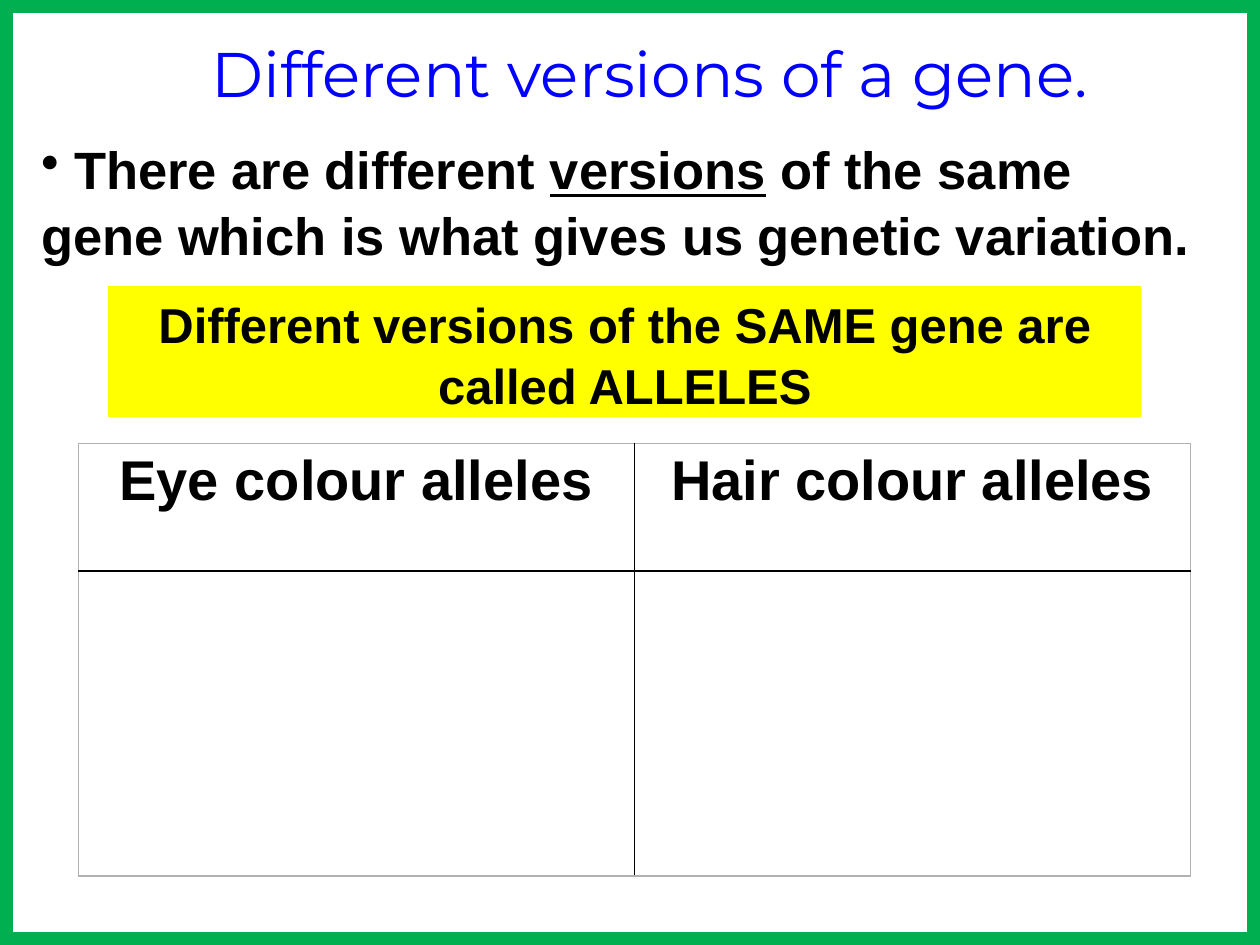
from lxml.etree import SubElement
from pptx import Presentation
from pptx.dml.color import RGBColor
from pptx.enum.shapes import MSO_SHAPE
from pptx.enum.text import MSO_ANCHOR, PP_ALIGN
from pptx.oxml.ns import qn
from pptx.util import Cm, Pt

BLACK = RGBColor(0x00, 0x00, 0x00)
BLUE = RGBColor(0x00, 0x00, 0xFF)
GREEN = RGBColor(0x00, 0xB0, 0x50)
YELLOW = RGBColor(0xFF, 0xFF, 0x00)
WHITE = RGBColor(0xFF, 0xFF, 0xFF)
GREY = RGBColor(0xB2, 0xB2, 0xB2)

# Content: runs are (text, underlined)
TITLE = [("Different versions of a gene.", False)]
EXPLANATION = [
    (" There are different ", False),
    ("versions", True),
    (" of the same gene which is what gives us genetic variation.", False),
]
DEFINITION = [("Different versions of the SAME gene are called ALLELES", False)]
ALLELE_ROWS = [["Eye colour alleles", "Hair colour alleles"], ["", ""]]
ROW_HEIGHTS = [Cm(2.57), Cm(6.15)]
COLUMN_WIDTH = Cm(11.21)


def write(frame, runs, size, font="Arial", color=BLACK, bold=True,
          align=PP_ALIGN.CENTER, spacing=None):
    paragraph = frame.paragraphs[0]
    paragraph.alignment = align
    paragraph.line_spacing = spacing
    for text, underlined in runs:
        run = paragraph.add_run()
        run.text = text
        run.font.name = font
        run.font.size = Pt(size)
        run.font.bold = bold
        run.font.underline = underlined
        run.font.color.rgb = color
    return paragraph


def set_border(cell, side, color):
    line = SubElement(cell._tc.get_or_add_tcPr(), qn(f"a:{side}"), w=str(Pt(1)))
    fill = SubElement(line, qn("a:solidFill"))
    SubElement(fill, qn("a:srgbClr"), val=str(color))


presentation = Presentation()
presentation.slide_width, presentation.slide_height = Cm(25.4), Cm(19.05)
slide = presentation.slides.add_slide(presentation.slide_layouts[6])
shapes = slide.shapes

# Title
title = shapes.add_textbox(Cm(0.79), Cm(0.58), Cm(24.61), Cm(1.98)).text_frame
title.word_wrap = False
write(title, TITLE, 36, font="Montserrat", color=BLUE, bold=False)

# Bulleted explanation
explanation = shapes.add_textbox(Cm(0.58), Cm(2.59), Cm(24), Cm(2.82)).text_frame
explanation.word_wrap = True
bulleted = write(explanation, EXPLANATION, 30, align=PP_ALIGN.LEFT, spacing=1.04)
SubElement(bulleted._p.get_or_add_pPr(), qn("a:buChar"), char="•")

# Allele table: black inner lines, grey outer lines
row_count, column_count = len(ALLELE_ROWS), len(ALLELE_ROWS[0])
alleles = shapes.add_table(row_count, column_count, Cm(1.58), Cm(8.94),
                           COLUMN_WIDTH * column_count, sum(ROW_HEIGHTS)).table
for column in alleles.columns:
    column.width = COLUMN_WIDTH
for r, (labels, height) in enumerate(zip(ALLELE_ROWS, ROW_HEIGHTS)):
    alleles.rows[r].height = height
    for c, label in enumerate(labels):
        cell = alleles.cell(r, c)
        outer_sides = {"lnL": c == 0, "lnR": c == column_count - 1,
                       "lnT": r == 0, "lnB": r == row_count - 1}
        for side, is_outer in outer_sides.items():
            set_border(cell, side, GREY if is_outer else BLACK)
        cell.fill.solid()
        cell.fill.fore_color.rgb = WHITE
        if label:
            write(cell.text_frame, [(label, False)], 32)

# Slide frame
frame = shapes.add_shape(MSO_SHAPE.RECTANGLE, 0, 0,
                         presentation.slide_width, presentation.slide_height)
frame.shadow.inherit = False
frame.fill.background()
frame.line.color.rgb = GREEN
frame.line.width = Pt(15)

# Highlighted definition
definition = shapes.add_shape(MSO_SHAPE.RECTANGLE, Cm(2.18), Cm(5.77), Cm(20.83), Cm(2.64))
definition.shadow.inherit = False
definition.fill.solid()
definition.fill.fore_color.rgb = YELLOW
definition.line.fill.background()
definition.text_frame.word_wrap = True
definition.text_frame.vertical_anchor = MSO_ANCHOR.TOP
write(definition.text_frame, DEFINITION, 28, spacing=1.04)

presentation.save("out.pptx")
